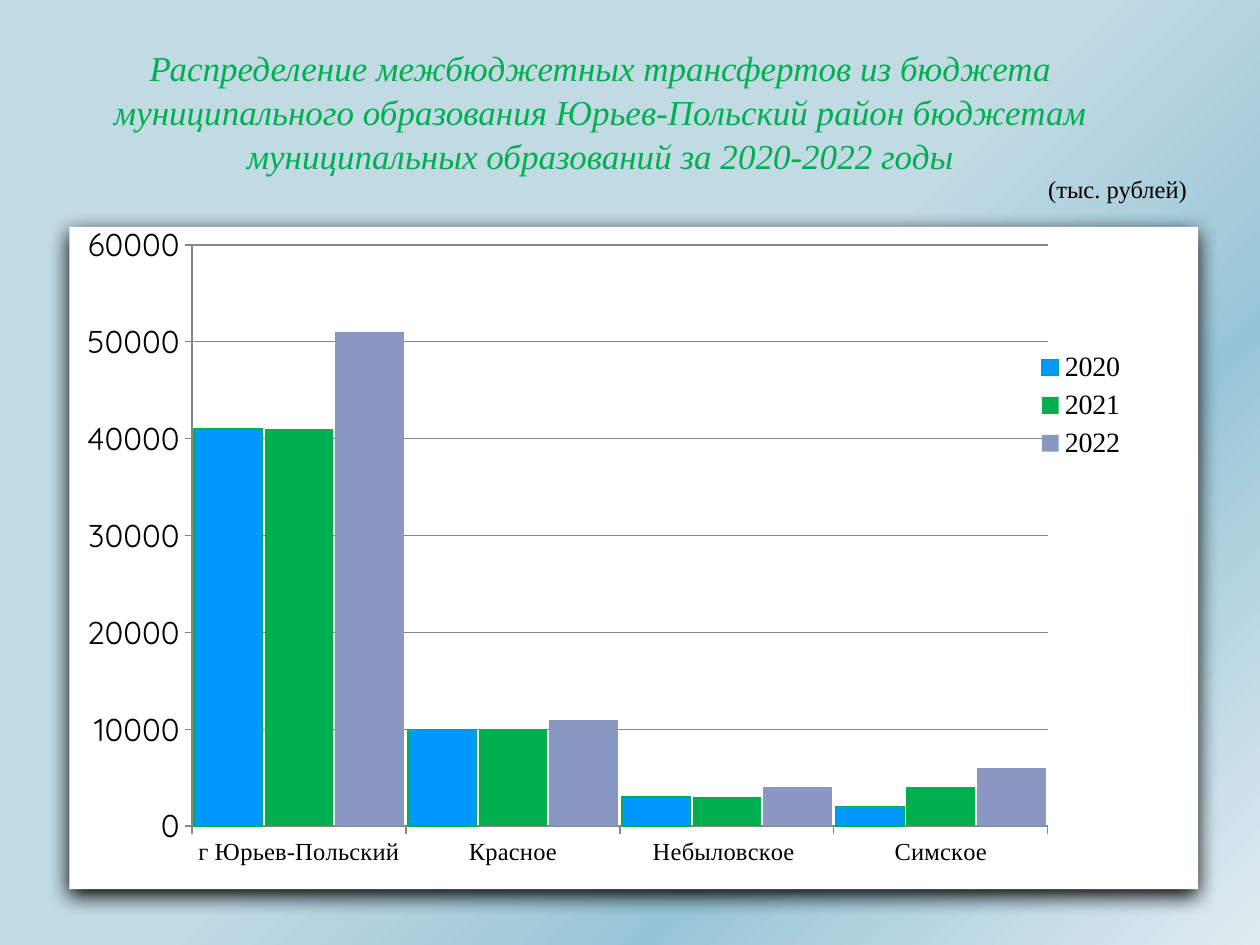
from dataclasses import dataclass

from lxml import etree
from pptx import Presentation, util as u
from pptx.chart.data import CategoryChartData
from pptx.dml.color import RGBColor
from pptx.enum import chart as c, shapes, text
from pptx.oxml import parse_xml
from pptx.oxml.ns import nsdecls, qn

WIDTH, HEIGHT = u.Inches(10), u.Inches(7.5)


@dataclass(frozen=True)
class Theme:
    serif: str = "Times New Roman"
    sans: str = "Quicksand"
    black: str = "000000"
    white: str = "FFFFFF"
    green: str = "00B050"
    blue: str = "0099FF"
    lavender: str = "8898C3"
    grid: str = "868686"
    background: tuple = ((0, "C1DAE4"), (50, "C1DAE4"), (72, "98C5D6"), (100, "E1ECF1"))
    title_size: int = 20
    axis_size: int = 18
    legend_size: int = 16
    label_size: int = 14


THEME = Theme()

TITLE = (
    "Распределение межбюджетных трансфертов из бюджета муниципального "
    "образования Юрьев-Польский район бюджетам муниципальных образований "
    "за 2020-2022 годы"
)
SETTLEMENTS = ("г Юрьев-Польский ", "Красное", "Небыловское ", "Симское")
TRANSFERS = (
    ("2020", (41000, 10000, 3000, 2000), THEME.blue, THEME.green),
    ("2021", (41000, 10000, 3000, 4000), THEME.green, None),
    ("2022", (51000, 11000, 4000, 6000), THEME.lavender, None),
)


def box(left, top, width, height):
    """Turn percentages of the slide's size into lengths."""
    return tuple(
        int(share * side / 100)
        for share, side in zip((left, top, width, height), (WIDTH, HEIGHT) * 2)
    )


def place(shape, bounds):
    shape.left, shape.top, shape.width, shape.height = bounds


def style_font(font, size, family=THEME.serif, color=THEME.black, italic=False):
    font.size = u.Pt(size)
    font.name = family
    font.italic = italic
    font.bold = False
    font.color.rgb = RGBColor.from_string(color)


def write_text(shape, words, align, wrap=True, spacing=1.0, **font_format):
    frame = shape.text_frame
    frame.word_wrap = wrap
    frame.auto_size = text.MSO_AUTO_SIZE.SHAPE_TO_FIT_TEXT
    frame.vertical_anchor = text.MSO_ANCHOR.TOP
    paragraph = frame.paragraphs[0]
    paragraph.alignment = align
    paragraph.line_spacing = spacing
    run = paragraph.add_run()
    run.text = words
    style_font(run.font, **font_format)


def paint_background(slide):
    fill = slide.background.fill
    fill.gradient()
    fill.gradient_angle = 315
    stops = slide.background._cSld.find(".//" + qn("a:gsLst"))
    for stop in list(stops):
        stops.remove(stop)
    for position, color in THEME.background:
        stop = etree.SubElement(stops, qn("a:gs"), pos=str(position * 1000))
        etree.SubElement(stop, qn("a:srgbClr"), val=color)


def add_panel(slide, bounds):
    panel = slide.shapes.add_shape(shapes.MSO_SHAPE.RECTANGLE, *bounds)
    panel.fill.solid()
    panel.fill.fore_color.rgb = RGBColor.from_string(THEME.white)
    panel.line.fill.background()
    panel._element.spPr.append(parse_xml(
        f'<a:effectLst {nsdecls("a")}><a:outerShdw blurRad="{u.Pt(12)}" '
        f'dist="{u.Pt(4)}" dir="5400000" algn="ctr" rotWithShape="0">'
        f'<a:srgbClr val="{THEME.black}"/></a:outerShdw></a:effectLst>'
    ))


def set_layout(parent, index, inner=False, **shares):
    """Pin a chart part to shares of the chart's size."""
    for previous in parent.findall(qn("c:layout")):
        parent.remove(previous)
    target = '<c:layoutTarget val="inner"/>' if inner else ""
    modes = '<c:xMode val="edge"/><c:yMode val="edge"/>'
    values = "".join(f'<c:{key} val="{value}"/>' for key, value in shares.items())
    parent.insert(index, parse_xml(
        f'<c:layout {nsdecls("c")}><c:manualLayout>{target}{modes}{values}'
        "</c:manualLayout></c:layout>"
    ))


def style_line(line, color, width=0.75):
    line.color.rgb = RGBColor.from_string(color)
    line.width = u.Pt(width)


def style_axis(axis, **font_format):
    axis.major_tick_mark = c.XL_TICK_MARK.OUTSIDE
    axis.minor_tick_mark = c.XL_TICK_MARK.NONE
    style_line(axis.format.line, THEME.grid)
    style_font(axis.tick_labels.font, **font_format)


def style_legend(chart):
    chart.has_legend = True
    legend = chart.legend
    legend.position = c.XL_LEGEND_POSITION.RIGHT
    legend.include_in_layout = False
    style_font(legend.font, THEME.legend_size)
    set_layout(legend._element, 1, x=0.86, y=0.2, w=0.11, h=0.18)


def add_transfer_chart(slide, bounds):
    data = CategoryChartData(number_format="General")
    data.categories = SETTLEMENTS
    for year, values, _, _ in TRANSFERS:
        data.add_series(year, values)
    chart = slide.shapes.add_chart(
        c.XL_CHART_TYPE.COLUMN_CLUSTERED, *bounds, data
    ).chart
    chart.has_title = False
    style_font(chart.font, THEME.axis_size, THEME.sans)

    plot = chart.plots[0]
    plot.gap_width, plot.overlap, plot.vary_by_categories = 6, -3, False
    for series, (_, _, color, outline) in zip(plot.series, TRANSFERS):
        series.format.fill.solid()
        series.format.fill.fore_color.rgb = RGBColor.from_string(color)
        if outline:
            style_line(series.format.line, outline)

    style_axis(chart.category_axis, size=THEME.label_size)
    style_axis(chart.value_axis, size=THEME.axis_size, family=THEME.sans)
    chart.value_axis.minimum_scale = 0
    chart.value_axis.maximum_scale = 60000
    chart.value_axis.major_unit = 10000
    chart.value_axis.has_major_gridlines = True
    style_line(chart.value_axis.major_gridlines.format.line, THEME.grid)
    style_legend(chart)
    plot_area = chart._chartSpace.find(".//" + qn("c:plotArea"))
    set_layout(plot_area, 0, inner=True, x=0.115, y=0.05, w=0.77, h=0.87)


def main():
    presentation = Presentation()
    presentation.slide_width, presentation.slide_height = WIDTH, HEIGHT
    slide = presentation.slides.add_slide(presentation.slide_layouts[5])
    paint_background(slide)
    add_panel(slide, box(5.5, 24, 89.6, 70.1))
    add_transfer_chart(slide, box(5.1, 22.4, 88.2, 70.7))

    title = slide.shapes.title
    place(title, box(3.1, 4.1, 89.1, 14.8))
    write_text(title, TITLE, text.PP_ALIGN.CENTER, spacing=1.04,
               size=THEME.title_size, color=THEME.green, italic=True)
    unit = slide.shapes.add_textbox(*box(82.1, 17.8, 13.1, 4.5))
    write_text(unit, "(тыс. рублей)", text.PP_ALIGN.RIGHT, wrap=False,
               size=THEME.label_size)
    presentation.save("out.pptx")


if __name__ == "__main__":
    main()
